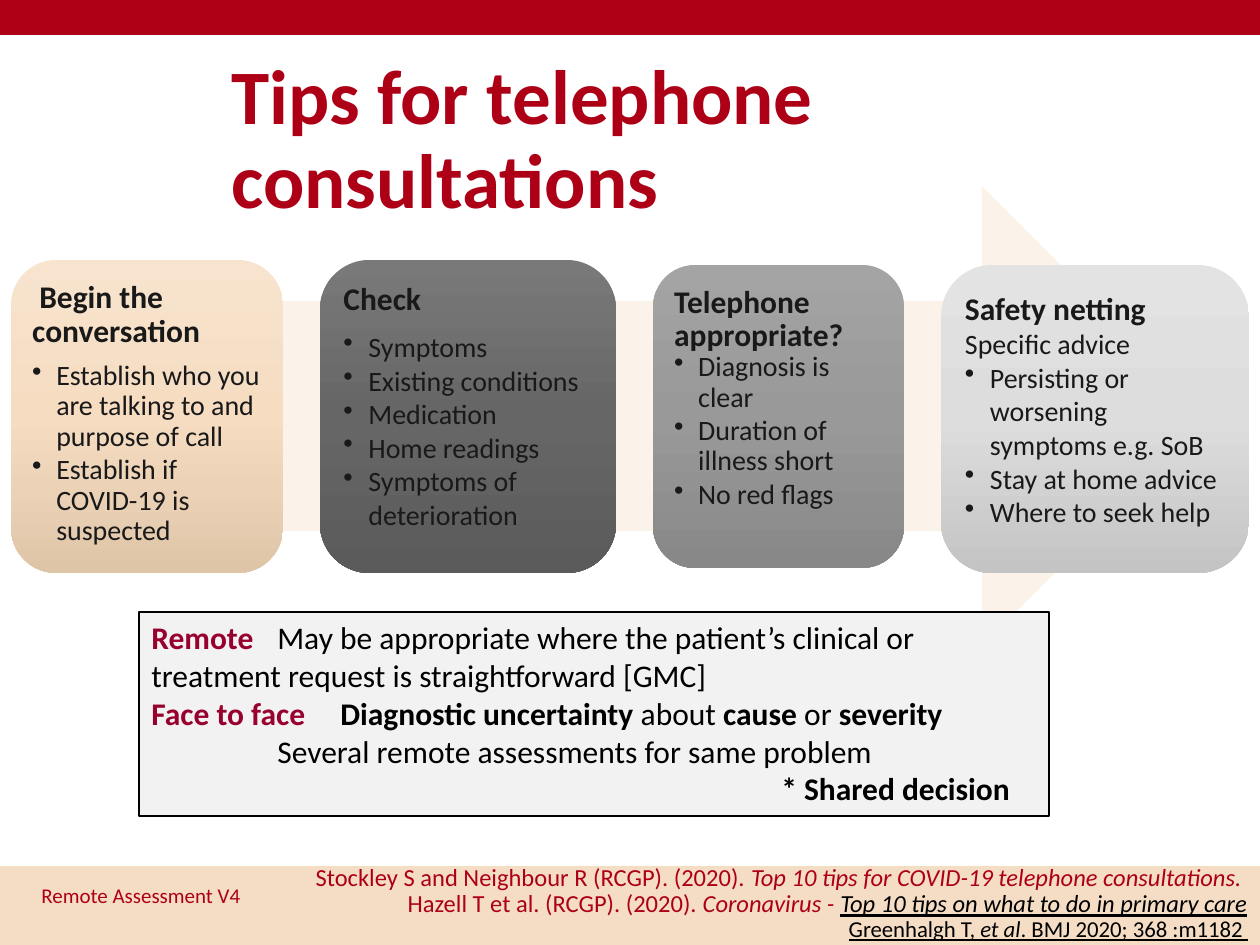
from dataclasses import dataclass

from lxml import etree
from pptx import Presentation
from pptx.dml.color import RGBColor
from pptx.enum.shapes import MSO_SHAPE
from pptx.enum.text import MSO_ANCHOR, PP_ALIGN
from pptx.oxml.ns import qn
from pptx.util import Emu, Pt

RECT, ROUND, ARROW = MSO_SHAPE.RECTANGLE, MSO_SHAPE.ROUNDED_RECTANGLE, MSO_SHAPE.RIGHT_ARROW
TOP, MIDDLE = MSO_ANCHOR.TOP, MSO_ANCHOR.MIDDLE
LEFT, RIGHT = PP_ALIGN.LEFT, PP_ALIGN.RIGHT
EMU_PER_PX = 914400 / 126


@dataclass(frozen=True)
class Theme:
    """Colours, font and type sizes of the slide."""
    font: str = "Calibri"
    red: str = "AD0016"
    label: str = "98002E"
    black: str = "000000"
    ink: str = "191919"
    sand: str = "F4DDC4"
    arrow: str = "FBF2EA"
    panel: str = "F2F2F2"
    title: int = 44
    heading: int = 18
    body: int = 16
    source: int = 14
    journal: int = 13
    small: int = 12


T = Theme()


@dataclass(frozen=True)
class Card:
    """One step: place, gradient, heading, plain line, bullets and spacing."""
    box: tuple
    colours: tuple
    heading: str
    bullets: tuple
    intro: str = ""
    heading_spacing: object = 0.9
    heading_after: int = 0
    spacing: object = 1.0
    after: int = 0
    inset: int = 9
    indent: int = 25


CARDS = (
    Card((11, 260, 272, 313), ("F7E3CE", "F6DDC2", "DFC5A8"), " Begin the conversation",
         ("Establish who you are talking to and purpose of call",
          "Establish if COVID-19 is suspected"),
         heading_after=7, spacing=0.9, after=2, inset=8, indent=24),
    Card((320, 260, 296, 313), ("797979", "666666", "5B5B5B"), "Check",
         ("Symptoms", "Existing conditions", "Medication", "Home readings",
          "Symptoms of deterioration"), heading_after=7),
    Card((653, 265, 251, 303), ("A4A4A4", "999999", "888888"), "Telephone appropriate?",
         ("Diagnosis is clear", "Duration of illness short", "No red flags"),
         heading_spacing=Pt(19), spacing=0.9, after=2, indent=24),
    Card((941, 265, 308, 308), ("E3E3E3", "DDDDDD", "C4C4C4"), "Safety netting",
         ("Persisting or worsening symptoms e.g. SoB", "Stay at home advice",
          "Where to seek help"), intro="Specific advice", heading_spacing=1.0),
)


def px(n):
    """Turn pixels into EMU."""
    return Emu(round(n * EMU_PER_PX))


def add_shape(s, kind, box, fill=None, line=None, width=1):
    """Add a preset shape with a plain fill and an optional outline."""
    sp = s.shapes.add_shape(kind, *map(px, box))
    sp.shadow.inherit = False
    if fill:
        sp.fill.solid()
        sp.fill.fore_color.rgb = RGBColor.from_string(fill)
    if line:
        sp.line.color.rgb = RGBColor.from_string(line)
        sp.line.width = Pt(width)
    else:
        sp.line.fill.background()
    return sp


def set_gradient(sp, colours):
    """Fill a shape with an even top-to-bottom gradient."""
    sp.fill.gradient()
    grad = sp.fill._xPr.find(qn("a:gradFill"))
    stops = grad.find(qn("a:gsLst"))
    for stop in list(stops):
        stops.remove(stop)
    for i, colour in enumerate(colours):
        stop = etree.SubElement(stops, qn("a:gs"), pos=str(100000 * i // (len(colours) - 1)))
        etree.SubElement(stop, qn("a:srgbClr"), val=colour)
    grad.find(qn("a:lin")).set("ang", "5400000")


def frame(sp, anchor=TOP, inset=None):
    """Prepare the wrapped text frame of a shape."""
    tf = sp.text_frame
    tf.word_wrap = True
    tf.vertical_anchor = anchor
    if inset is not None:
        tf.margin_left = tf.margin_right = tf.margin_top = tf.margin_bottom = px(inset)
    return tf


def add_textbox(s, box, anchor=TOP):
    """Add a text box and give its text frame."""
    return frame(s.shapes.add_textbox(*map(px, box)), anchor)


def add_paragraph(tf, runs, size, colour, spacing=1.0, after=0, align=LEFT, indent=0, bullet=False):
    """Write a paragraph of (text, style letters, colour) runs."""
    p = tf.paragraphs[0]
    if p.runs:
        p = tf.add_paragraph()
    p.alignment, p.line_spacing, p.space_after = align, spacing, Pt(after)
    if indent:
        p_pr = p._p.get_or_add_pPr()
        p_pr.set("marL", str(px(indent)))
        p_pr.set("indent", str(-px(indent) if bullet else 0))
        if bullet:
            etree.SubElement(p_pr, qn("a:buChar"), char="•")
    for text, style, *own in runs:
        for i, part in enumerate(text.split("\v")):
            if i:
                p.add_line_break()
            r = p.add_run()
            r.text = part
            r.font.name, r.font.size = T.font, Pt(size)
            r.font.bold, r.font.italic = "b" in style, "i" in style
            r.font.underline = "u" in style
            r.font.color.rgb = RGBColor.from_string(own[0] if own else colour)


def add_card(s, card):
    """Add one rounded step with its heading and bullets."""
    sp = add_shape(s, ROUND, card.box)
    set_gradient(sp, card.colours)
    tf = frame(sp, inset=card.inset)
    add_paragraph(tf, [(card.heading, "b")], T.heading, T.ink,
                  card.heading_spacing, card.heading_after)
    if card.intro:
        add_paragraph(tf, [(card.intro, "")], T.body, T.ink)
    for text in card.bullets:
        add_paragraph(tf, [(text, "")], T.body, T.ink, card.spacing, card.after,
                      indent=card.indent, bullet=True)


def add_decision_panel(s):
    """Add the outlined panel on remote or face to face care."""
    tf = frame(add_shape(s, RECT, (139, 612, 910, 204), T.panel, T.black, 0.75))
    lines = (
        (0, [("Remote \t", "b", T.label),
             ("May be appropriate where the patient’s clinical or\v"
              "treatment request is straightforward [GMC]", "")]),
        (0, [("Face to face \t", "b", T.label), ("Diagnostic uncertainty", "b"),
             (" about ", ""), ("cause ", "b"), ("or ", ""), ("severity", "b")]),
        (126, [("Several remote assessments for same problem", "")]),
        (630, [("* Shared decision", "b")]),
    )
    for indent, runs in lines:
        add_paragraph(tf, runs, T.heading, T.black, indent=indent)


def add_sources(s):
    """Add the right-aligned references in the footer."""
    tf = add_textbox(s, (0, 859, 1260, 92))
    lines = (
        (T.source, [("Stockley S and Neighbour R (RCGP). (2020). ", ""),
                    ("Top 10 tips for COVID-19 telephone consultations. ", "i")]),
        (T.source, [("Hazell T et al. (RCGP). (2020). ", ""), ("Coronavirus - ", "i"),
                    ("Top 10 tips on what to do in primary care", "iu", T.black)]),
        (T.journal, [("Greenhalgh T, ", "u", T.black), ("et al", "iu", T.black),
                     (". BMJ 2020; 368 :m1182 ", "u", T.black)]),
    )
    for size, runs in lines:
        add_paragraph(tf, runs, size, T.red, 0.9, align=RIGHT)


def main():
    """Build the slide and save it."""
    prs = Presentation()
    prs.slide_width, prs.slide_height = px(1260), px(945)
    s = prs.slides.add_slide(prs.slide_layouts[6])
    add_shape(s, RECT, (0, 867, 1260, 78), T.sand, T.sand)
    add_shape(s, RECT, (0, 0, 1260, 34), T.red, T.red)
    add_sources(s)
    add_shape(s, ARROW, (25, 186, 1187, 460), T.arrow)
    for card in CARDS:
        add_card(s, card)
    add_paragraph(add_textbox(s, (219, 50, 1019, 183), MIDDLE),
                  [("Tips for telephone consultations", "b")], T.title, T.red, 0.9)
    add_decision_panel(s)
    add_paragraph(add_textbox(s, (29, 870, 284, 50), MIDDLE),
                  [("Remote Assessment V4", "")], T.small, T.red)
    prs.save("out.pptx")


if __name__ == "__main__":
    main()
